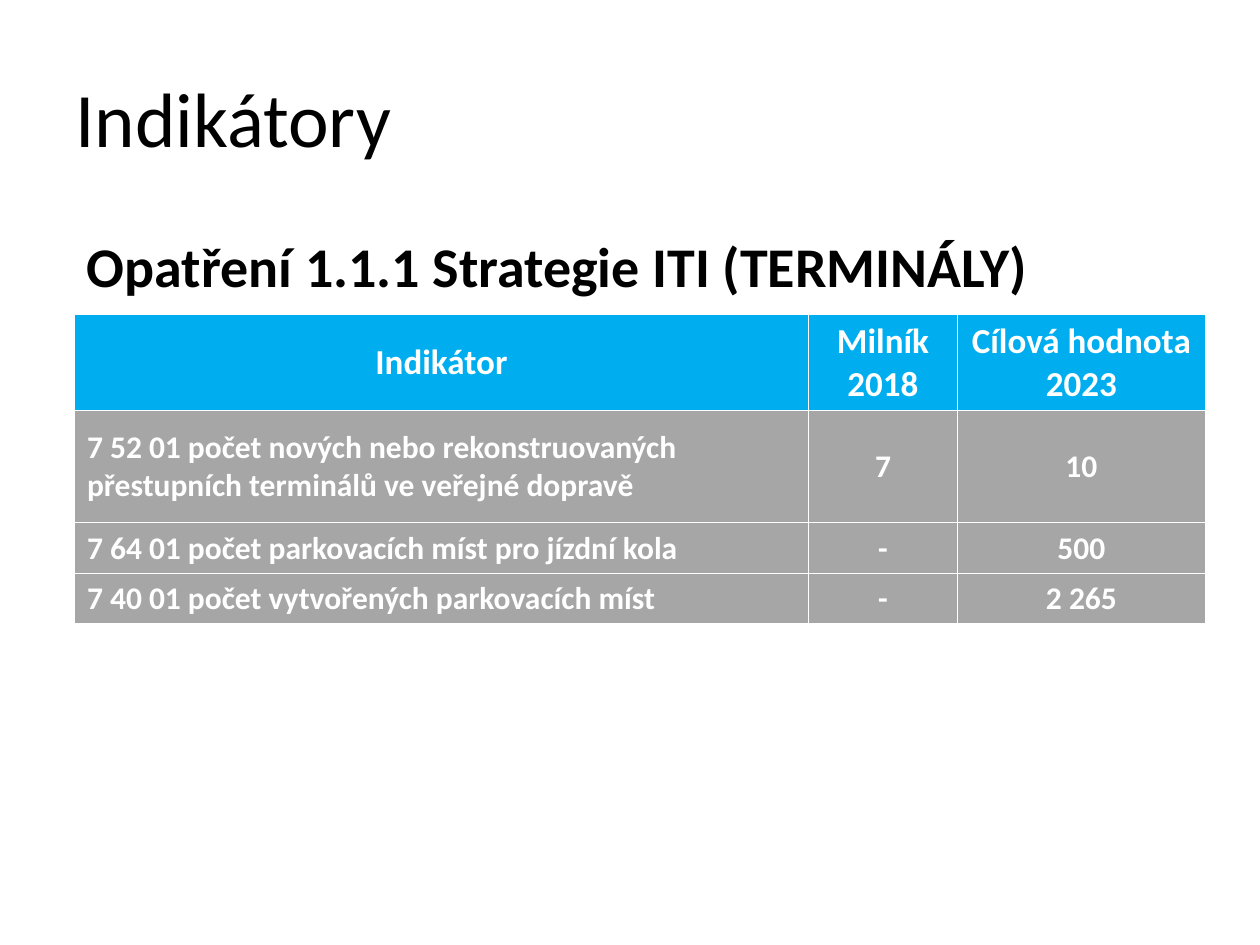
"""Build the slide with the indicator table for measure 1.1.1."""
from pptx import Presentation
from pptx.dml.color import RGBColor
from pptx.enum.text import MSO_ANCHOR, PP_ALIGN
from pptx.util import Cm, Pt

MIDDLE = MSO_ANCHOR.MIDDLE
LEFT, CENTER = PP_ALIGN.LEFT, PP_ALIGN.CENTER
BLACK = RGBColor(0x00, 0x00, 0x00)
WHITE = RGBColor(0xFF, 0xFF, 0xFF)
BLUE = RGBColor(0x00, 0xAE, 0xEF)
GRAY = RGBColor(0xA6, 0xA6, 0xA6)
FONT = "Calibri"

COL_WIDTHS = [14.8, 3, 5]
ROW_HEIGHTS = [1.94, 2.26, 1.02, 1.02]
ROWS = [
    ["Indikátor", "Milník 2018", "Cílová hodnota 2023"],
    ["7 52 01 počet nových nebo rekonstruovaných\n"
     "přestupních terminálů ve veřejné dopravě", "7", "10"],
    ["7 64 01 počet parkovacích míst pro jízdní kola", "-", "500"],
    ["7 40 01 počet vytvořených parkovacích míst", "-", "2 265"],
]


def add_run(p, text, size, color, bold, align):
    p.alignment = align
    r = p.add_run()
    r.text = text
    r.font.name = FONT
    r.font.size = Pt(size)
    r.font.bold = bold
    r.font.color.rgb = color


prs = Presentation()
prs.slide_width, prs.slide_height = Cm(25.4), Cm(19.05)
s = prs.slides.add_slide(prs.slide_layouts[5])

title = s.shapes.title
title.left, title.top, title.width, title.height = Cm(1.27), Cm(0.76), Cm(22.86), Cm(3.18)
title.text_frame.vertical_anchor = MIDDLE
add_run(title.text_frame.paragraphs[0], "Indikátory", 44, BLACK, False, LEFT)

heading = s.shapes.add_textbox(Cm(1.5), Cm(4.55), Cm(22.86), Cm(1.65))
heading.text_frame.word_wrap = True
add_run(heading.text_frame.paragraphs[0], "Opatření 1.1.1 Strategie ITI (TERMINÁLY)",
        32, BLACK, True, LEFT)

table = s.shapes.add_table(len(ROWS), len(COL_WIDTHS), Cm(1.5), Cm(6.33),
                           Cm(sum(COL_WIDTHS)), Cm(sum(ROW_HEIGHTS))).table
for column, width in zip(table.columns, COL_WIDTHS):
    column.width = Cm(width)
for i, (texts, height) in enumerate(zip(ROWS, ROW_HEIGHTS)):
    table.rows[i].height = Cm(height)
    header = i == 0
    for j, text in enumerate(texts):
        cell = table.cell(i, j)
        cell.vertical_anchor = MIDDLE
        cell.fill.solid()
        cell.fill.fore_color.rgb = BLUE if header else GRAY
        tf = cell.text_frame
        for k, line in enumerate(text.split("\n")):
            p = tf.add_paragraph() if k else tf.paragraphs[0]
            add_run(p, line, 20 if header else 18, WHITE, True,
                    CENTER if header or j else LEFT)

prs.save("out.pptx")
